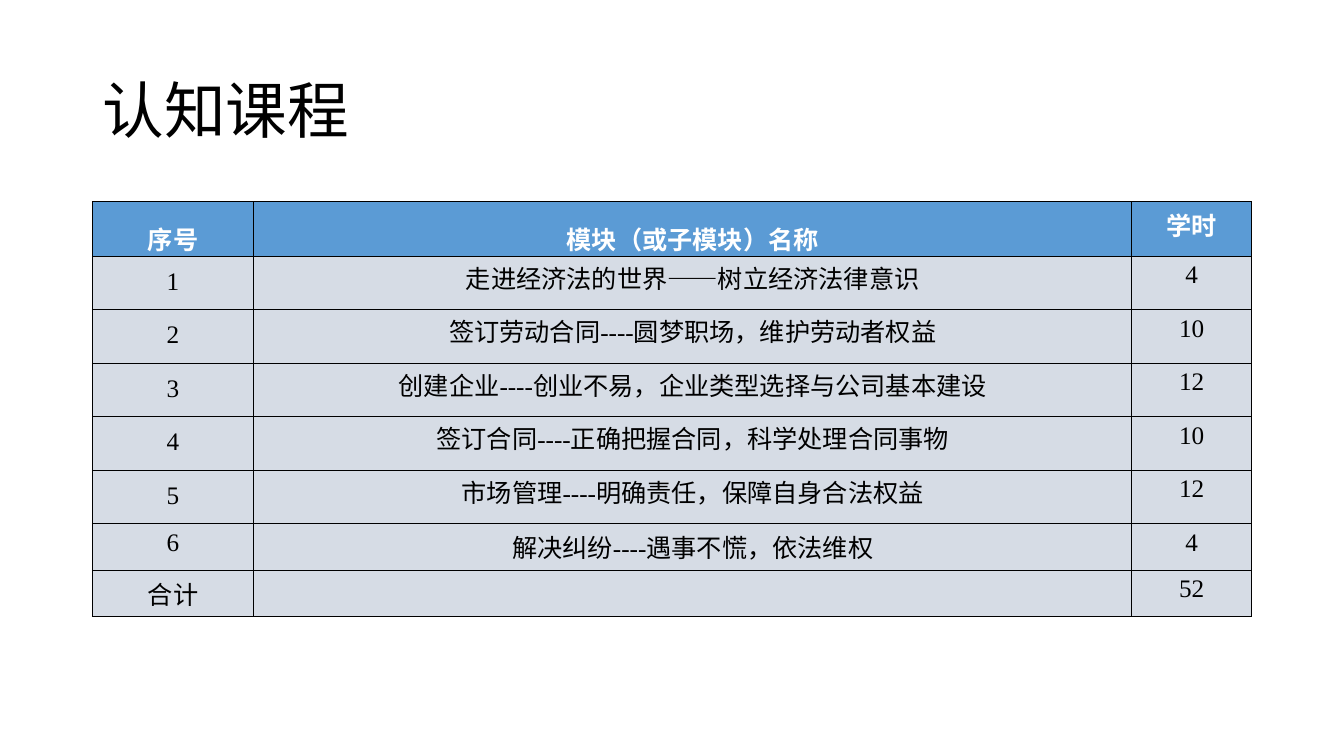
from lxml import etree
from pptx import Presentation
from pptx.dml.color import RGBColor
from pptx.enum import text
from pptx.oxml import ns
from pptx.util import Pt

HEADER = ("序号", "模块（或子模块）名称", "学时")
MODULES = (
    ("1", "走进经济法的世界——树立经济法律意识", "4"),
    ("2", "签订劳动合同----圆梦职场，维护劳动者权益", "10"),
    ("3", "创建企业----创业不易，企业类型选择与公司基本建设", "12"),
    ("4", "签订合同----正确把握合同，科学处理合同事物", "10"),
    ("5", "市场管理----明确责任，保障自身合法权益", "12"),
    ("6", "解决纠纷----遇事不慌，依法维权", "4"),
    ("合计", "", "52"),
)
COL_WIDTHS = (115.2, 627.2, 85.6)
ROW_HEIGHTS = (32.4,) + (38.2,) * 5 + (28.8,) * 2


def color(value):
    return RGBColor.from_string(value)


def format_run(r, font, size, rgb, bold=False):
    r.font.name = font
    r.font.size = Pt(size)
    r.font.color.rgb = color(rgb)
    r.font.bold = bold


def add_title(slide, title):
    sp = slide.shapes.title
    sp.left, sp.top, sp.width, sp.height = Pt(66), Pt(28.8), Pt(828), Pt(104.4)
    tf = sp.text_frame
    tf.text = title
    tf.auto_size = text.MSO_AUTO_SIZE.NONE
    tf.vertical_anchor = text.MSO_ANCHOR.MIDDLE
    p = tf.paragraphs[0]
    p.alignment = text.PP_ALIGN.LEFT
    p.line_spacing = 0.9
    format_run(p.runs[0], "Calibri", 44, "000000")


def set_borders(cell, rgb, width):
    """Draw all four borders; they must precede the fill in tcPr."""
    tc_pr = cell._tc.get_or_add_tcPr()
    for i, side in enumerate(("lnL", "lnR", "lnT", "lnB")):
        ln = etree.Element(ns.qn(f"a:{side}"), w=str(Pt(width)))
        fill = etree.SubElement(ln, ns.qn("a:solidFill"))
        etree.SubElement(fill, ns.qn("a:srgbClr"), val=rgb)
        tc_pr.insert(i, ln)


def fill_cell(cell, value, is_header):
    cell.fill.solid()
    cell.fill.fore_color.rgb = color("5B9BD5" if is_header else "D6DCE5")
    set_borders(cell, "000000", 1)
    cell.text_frame.text = value
    p = cell.text_frame.paragraphs[0]
    p.alignment = text.PP_ALIGN.CENTER
    for r in p.runs:
        format_run(r, "Times New Roman", 18, "FFFFFF" if is_header else "000000", is_header)


def set_spacing(cell, line_spacing, anchor):
    """Give a cell its line spacing and narrow margins."""
    cell.margin_left = cell.margin_right = Pt(5.04)
    cell.margin_top = cell.margin_bottom = 0
    cell.vertical_anchor = anchor
    cell.text_frame.paragraphs[0].line_spacing = line_spacing


def add_course_table(slide):
    rows = (HEADER,) + MODULES
    table = slide.shapes.add_table(len(rows), len(HEADER), Pt(66), Pt(144),
                                   Pt(sum(COL_WIDTHS)), Pt(sum(ROW_HEIGHTS))).table
    for col, width in zip(table.columns, COL_WIDTHS):
        col.width = Pt(width)
    for row, height in zip(table.rows, ROW_HEIGHTS):
        row.height = Pt(height)
    for i, values in enumerate(rows):
        for j, value in enumerate(values):
            cell = table.cell(i, j)
            fill_cell(cell, value, i == 0)
            if i < 6 and j < 2:
                anchor = text.MSO_ANCHOR.TOP if i == j == 0 else text.MSO_ANCHOR.MIDDLE
                set_spacing(cell, 1.5 if i == 0 else Pt(18), anchor)


def main():
    prs = Presentation()
    prs.slide_width, prs.slide_height = Pt(960), Pt(540)
    slide = prs.slides.add_slide(prs.slide_layouts[5])
    add_title(slide, "认知课程")
    add_course_table(slide)
    prs.save("out.pptx")


if __name__ == "__main__":
    main()
